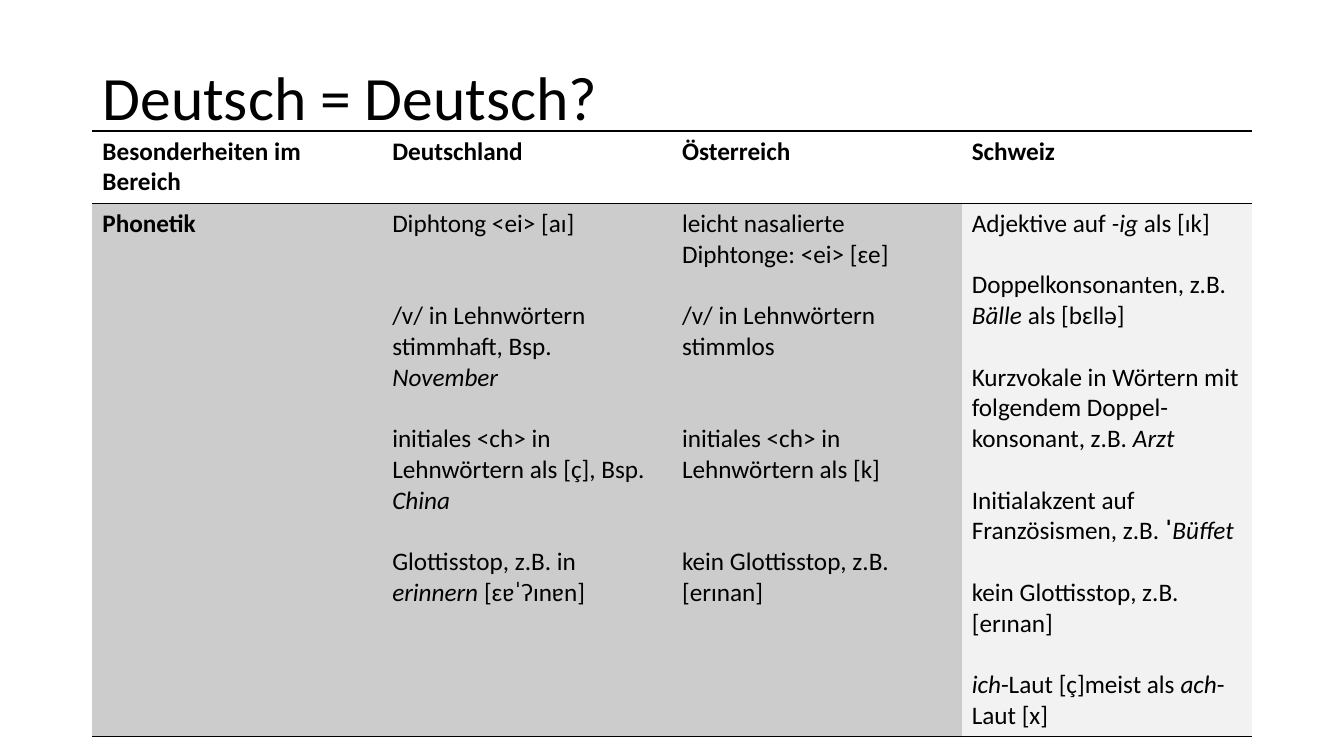
from lxml import etree
from pptx import Presentation
from pptx.dml.color import RGBColor
from pptx.enum.text import MSO_ANCHOR, MSO_AUTO_SIZE, PP_ALIGN
from pptx.oxml.ns import qn
from pptx.util import Inches, Pt

BLACK = RGBColor(0x00, 0x00, 0x00)
WHITE = RGBColor(0xFF, 0xFF, 0xFF)
GREY = RGBColor(0xCC, 0xCC, 0xCC)
PALE = RGBColor(0xF2, 0xF2, 0xF2)
MIDDLE = MSO_ANCHOR.MIDDLE
NO_FIT = MSO_AUTO_SIZE.NONE
LEFT = PP_ALIGN.LEFT
PLAIN, ITALIC, BOLD = "plain", "italic", "bold"
PLAIN_TABLE = "{2D5ABB26-0587-4C30-8999-92F81FD0307C}"
TITLE_ONLY = 5

HEADINGS = ["Besonderheiten im Bereich", "Deutschland", "Österreich", "Schweiz"]

GERMANY = [
    (0, [("Diphtong <ei> [aɪ]", PLAIN)]),
    (2, [("/v/ in Lehnwörtern stimmhaft, Bsp. ", PLAIN), ("November", ITALIC)]),
    (1, [("initiales <ch> in Lehnwörtern als [ç], Bsp. ", PLAIN), ("China", ITALIC)]),
    (1, [("Glottisstop, z.B. in ", PLAIN), ("erinnern ", ITALIC), ("[ɛɐˈʔɪnɐn]", PLAIN)]),
]
AUSTRIA = [
    (0, [("leicht nasalierte Diphtonge: <ei> [ɛe]", PLAIN)]),
    (1, [("/v/ in Lehnwörtern stimmlos", PLAIN)]),
    (2, [("initiales <ch> in Lehnwörtern als [k]", PLAIN)]),
    (2, [("kein Glottisstop, z.B. [erɪnan]", PLAIN)]),
]
SWITZERLAND = [
    (0, [("Adjektive auf ", PLAIN), ("-ig ", ITALIC), ("als [ɪk]", PLAIN)]),
    (1, [("Doppelkonsonanten, z.B. ", PLAIN), ("Bälle", ITALIC), (" als [bɛllə]", PLAIN)]),
    (1, [("Kurzvokale in Wörtern mit folgendem Doppel-konsonant, z.B. ", PLAIN),
         ("Arzt", ITALIC)]),
    (1, [("Initialakzent auf Französismen, z.B. ", PLAIN), ("ˈ", BOLD), ("Büffet", ITALIC)]),
    (1, [("kein Glottisstop, z.B. [erɪnan]", PLAIN)]),
    (1, [("ich", ITALIC), ("-Laut [ç]meist als ", PLAIN), ("ach", ITALIC),
         ("-Laut [x]", PLAIN)]),
]


class SlideBuilder:
    font_name = "Calibri"
    title_size = Pt(44)
    body_size = Pt(18)
    line_height = Pt(22)
    grid_columns, grid_rows = 160, 90

    def __init__(self, deck):
        self.column = deck.slide_width / self.grid_columns
        self.row = deck.slide_height / self.grid_rows
        self.slide = deck.slides.add_slide(deck.slide_layouts[TITLE_ONLY])

    def place(self, left, top, width, height):
        return [int(length) for length in (left * self.column, top * self.row,
                                           width * self.column, height * self.row)]

    def style(self, span, size, bold=False, italic=False):
        span.font.name = self.font_name
        span.font.size = size
        span.font.color.rgb = BLACK
        span.font.bold = bold
        span.font.italic = italic

    def title(self, text, *area):
        box = self.slide.shapes.title
        box.left, box.top, box.width, box.height = self.place(*area)
        frame = box.text_frame
        frame.text = text
        frame.auto_size = NO_FIT
        frame.vertical_anchor = MIDDLE
        para = frame.paragraphs[0]
        para.alignment = LEFT
        para.line_spacing = 0.9
        self.style(para.runs[0], self.title_size)

    def table(self, column_count, row_heights, *corner_and_width):
        area = self.place(*corner_and_width, sum(row_heights))
        frame = self.slide.shapes.add_table(len(row_heights), column_count, *area)
        table = frame.table
        table.first_row = table.horz_banding = False
        table._tbl.tblPr.find(qn("a:tableStyleId")).text = PLAIN_TABLE
        for row, height in zip(table.rows, row_heights):
            row.height = int(height * self.row)
        return table

    def cell(self, cell, paragraphs, fill, edges):
        frame = cell.text_frame
        for index, (gap, spans) in enumerate(paragraphs):
            para = frame.add_paragraph() if index else frame.paragraphs[0]
            para.space_before = gap * self.line_height
            for text, look in spans:
                span = para.add_run()
                span.text = text
                self.style(span, self.body_size, look == BOLD, look == ITALIC)
        for edge in edges:
            line = etree.SubElement(cell._tc.get_or_add_tcPr(), qn(edge), w=str(Pt(1)))
            paint = etree.SubElement(line, qn("a:solidFill"))
            etree.SubElement(paint, qn("a:srgbClr"), val=str(BLACK))
        cell.fill.solid()
        cell.fill.fore_color.rgb = fill


def main():
    deck = Presentation()
    deck.slide_width, deck.slide_height = Inches(13.33), Inches(7.5)
    builder = SlideBuilder(deck)
    builder.title("Deutsch = Deutsch?", 11, 3.25, 138, 17.4)
    table = builder.table(len(HEADINGS), [8.6, 63.5], 11, 15.6, 138)
    phonetics = [[(0, [("Phonetik", BOLD)])], GERMANY, AUSTRIA, SWITZERLAND]
    fills = [GREY, GREY, GREY, PALE]
    for index, (heading, entries, fill) in enumerate(zip(HEADINGS, phonetics, fills)):
        builder.cell(table.cell(0, index), [(0, [(heading, BOLD)])], WHITE,
                     ["a:lnT", "a:lnB"])
        builder.cell(table.cell(1, index), entries, fill, ["a:lnT", "a:lnB"])
    deck.save("out.pptx")


if __name__ == "__main__":
    main()
